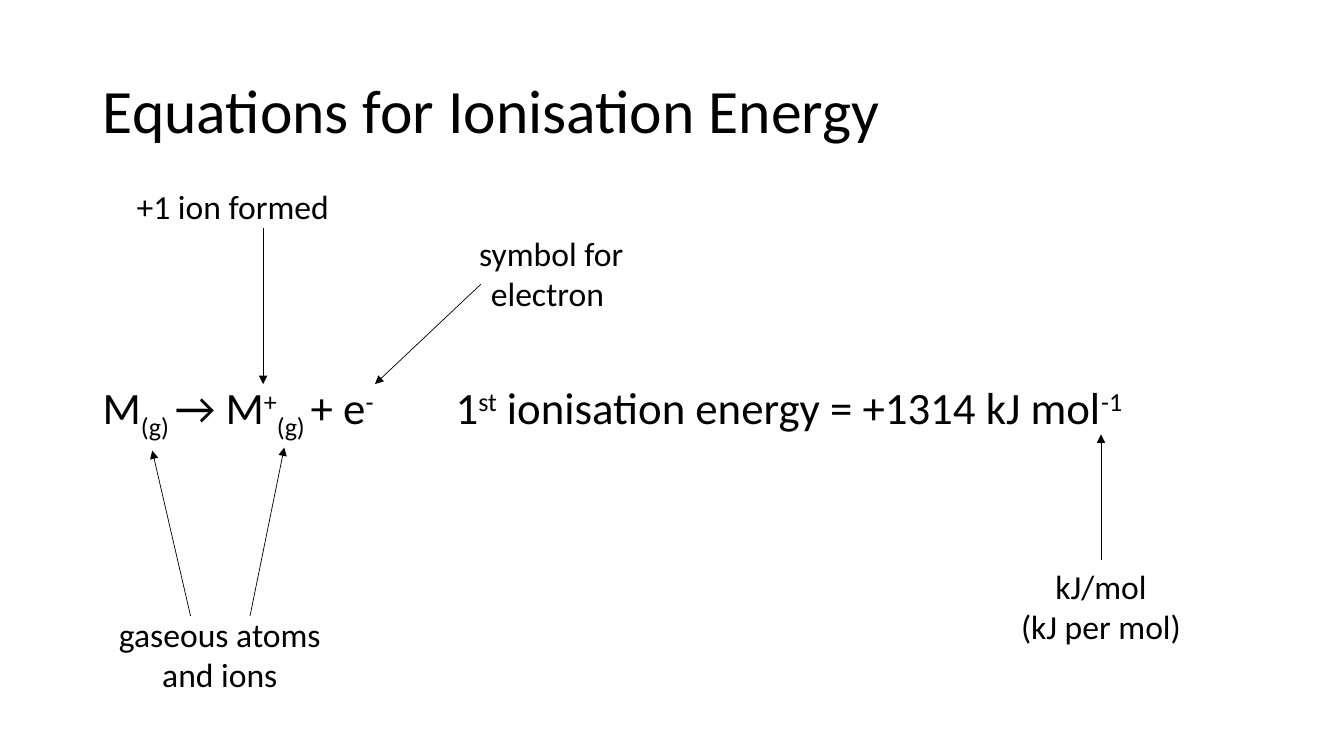
"""Build the slide on equations for ionisation energy."""
from lxml import etree
from pptx import Presentation
from pptx.dml.color import RGBColor
from pptx.enum.shapes import MSO_CONNECTOR
from pptx.enum.text import MSO_ANCHOR, PP_ALIGN
from pptx.oxml.ns import qn
from pptx.util import Inches, Pt

BLACK = RGBColor(0, 0, 0)
LEFT, CENTER, JUSTIFY = PP_ALIGN.LEFT, PP_ALIGN.CENTER, PP_ALIGN.JUSTIFY
TOP, MIDDLE = MSO_ANCHOR.TOP, MSO_ANCHOR.MIDDLE
STRAIGHT = MSO_CONNECTOR.STRAIGHT
SUB, SUPER = -25000, 30000


def write(frame, paragraphs, size=24, align=CENTER, anchor=TOP, spacing=1.0, before=0):
    frame.word_wrap = True
    frame.vertical_anchor = anchor
    for index, parts in enumerate(paragraphs):
        paragraph = frame.add_paragraph() if index else frame.paragraphs[0]
        paragraph.alignment = align
        paragraph.line_spacing = spacing
        paragraph.space_before = Pt(before)
        for text, baseline in parts:
            run = paragraph.add_run()
            run.text = text
            run.font.size = Pt(size)
            run.font.name = "Calibri"
            run.font.color.rgb = BLACK
            if baseline:
                run.font._element.set("baseline", str(baseline))


prs = Presentation()
prs.slide_width, prs.slide_height = Inches(13.33), Inches(7.5)
slide = prs.slides.add_slide(prs.slide_layouts[5])

title = slide.shapes.title
title.left, title.top = Inches(0.92), Inches(0.4)
title.width, title.height = Inches(11.5), Inches(1.45)
write(title.text_frame, [[("Equations for Ionisation Energy", 0)]],
      size=44, align=LEFT, anchor=MIDDLE, spacing=0.9)

equation = slide.shapes.add_textbox(Inches(0.92), Inches(3.73), Inches(11.5), Inches(0.67))
equation_parts = [
    ("M", 0), ("(g) ", SUB), ("→ M", 0), ("+", SUPER), ("(g) ", SUB),
    ("+ e", 0), ("-", SUPER), ("\t\t1", 0), ("st", SUPER),
    (" ionisation energy = +1314 kJ mol", 0), ("-1", SUPER),
]
write(equation.text_frame, [equation_parts], size=32, align=JUSTIFY, spacing=0.9, before=10)

annotations = [
    (["gaseous atoms and ions"], (0.92, 6.04, 2.52, 0.91),
     [(1.89, 6.11, 1.51, 4.47), (2.48, 6.11, 2.82, 4.44)]),
    ([" symbol for electron"], (4.08, 2.26, 2.7, 0.91), [(4.77, 2.82, 3.72, 3.81)]),
    ([" +1 ion formed"], (0.92, 1.8, 2.7, 0.5), [(2.61, 2.26, 2.61, 3.81)]),
    (["kJ/mol", "(kJ per mol)"], (9.66, 5.56, 2.52, 0.91), [(10.92, 5.56, 10.92, 4.31)]),
]
for lines, box, pointers in annotations:
    label = slide.shapes.add_textbox(*map(Inches, box))
    write(label.text_frame, [[(line, 0)] for line in lines])
    for ends in pointers:
        pointer = slide.shapes.add_connector(STRAIGHT, *map(Inches, ends))
        pointer.line.color.rgb = BLACK
        pointer.line.width = Pt(0.5)
        etree.SubElement(pointer.line._get_or_add_ln(), qn("a:tailEnd"), type="triangle")
        etree.SubElement(pointer._element.spPr, qn("a:effectLst"))

prs.save("out.pptx")
